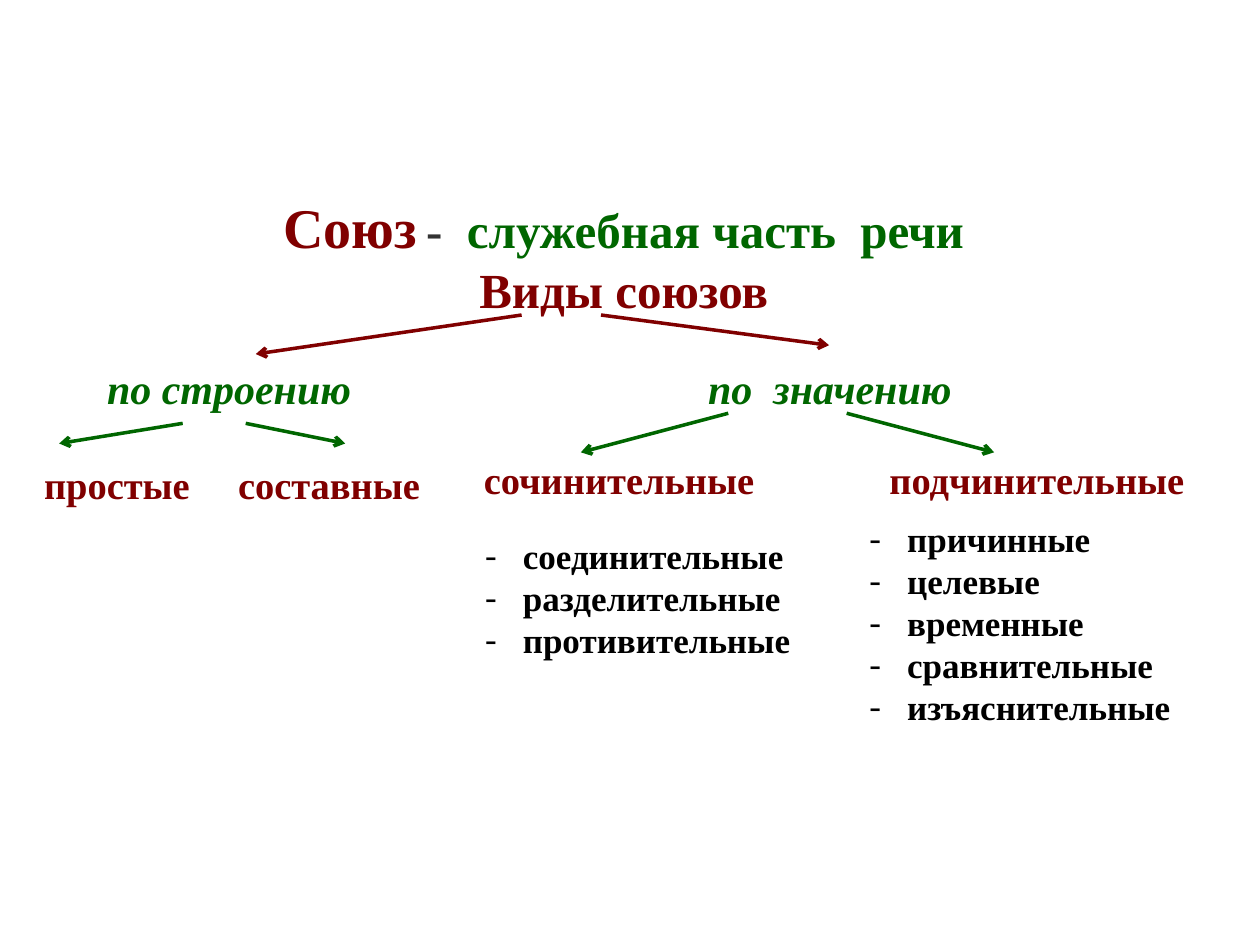
from lxml import etree
from pptx import Presentation
from pptx.dml.color import RGBColor
from pptx.enum.shapes import MSO_CONNECTOR
from pptx.enum.text import PP_ALIGN
from pptx.oxml.ns import qn
from pptx.util import Inches, Pt

STRAIGHT = MSO_CONNECTOR.STRAIGHT
CENTER = PP_ALIGN.CENTER
FONT = "Times New Roman"
MAROON, GREEN, GRAY, BLACK = "800000", "006600", "333333", "000000"


def add_text(left, top, width, height, lines, align=None):
    """Add a text box without margins; each line is a list of (text, size, colour, italic)."""
    box = slide.shapes.add_textbox(Inches(left), Inches(top), Inches(width), Inches(height))
    frame = box.text_frame
    frame.word_wrap = True
    frame.margin_left = frame.margin_right = frame.margin_top = frame.margin_bottom = 0
    for index, line in enumerate(lines):
        paragraph = frame.paragraphs[0] if index == 0 else frame.add_paragraph()
        paragraph.alignment = align
        for text, size, color, italic in line:
            run = paragraph.add_run()
            run.text = text
            run.font.name = FONT
            run.font.size = Pt(size)
            run.font.bold = True
            run.font.italic = italic
            run.font.color.rgb = RGBColor.from_string(color)
    return frame


prs = Presentation()
prs.slide_width, prs.slide_height = Inches(10), Inches(7.5)
slide = prs.slides.add_slide(prs.slide_layouts[6])

# Definition and heading
add_text(1.45, 1.53, 7, 1, [
    [("Союз", 32, MAROON, False), (" ", 20, GRAY, False),
     ("-  ", 28, GRAY, False), ("служебная часть  речи", 28, GREEN, False)],
    [("Виды союзов", 28, MAROON, False)],
], CENTER)

# Branches of the classification
labels = [
    ("по строению", 0.85, 2.88, 24, GREEN, True),
    ("по  значению", 5.62, 2.88, 24, GREEN, True),
    ("простые", 0.35, 3.66, 22, MAROON, False),
    ("составные", 1.89, 3.66, 22, MAROON, False),
    ("сочинительные", 3.84, 3.62, 22, MAROON, False),
    ("подчинительные", 7.06, 3.62, 22, MAROON, False),
]
for text, left, top, size, color, italic in labels:
    width = 1.5 if text == "простые" else 2.6
    add_text(left, top, width, 0.4, [[(text, size, color, italic)]])

# Arrows from each heading to its kinds
arrows = [
    (4.14, 2.5, 2.03, 2.81, MAROON),
    (4.77, 2.5, 6.58, 2.74, MAROON),
    (5.78, 3.28, 4.61, 3.59, GREEN),
    (6.72, 3.28, 7.89, 3.59, GREEN),
    (1.45, 3.36, 0.47, 3.52, GREEN),
    (1.95, 3.36, 2.74, 3.52, GREEN),
]
for x1, y1, x2, y2, color in arrows:
    arrow = slide.shapes.add_connector(STRAIGHT, Inches(x1), Inches(y1), Inches(x2), Inches(y2))
    arrow.line.color.rgb = RGBColor.from_string(color)
    arrow.line.width = Pt(2)
    etree.SubElement(arrow.line._get_or_add_ln(), qn("a:tailEnd"), type="arrow")
    etree.SubElement(arrow._element.spPr, qn("a:effectLst"))

# Subkinds by meaning
subkinds = [
    (3.85, 4.24, ["соединительные", "разделительные", "противительные"]),
    (6.9, 4.11, ["причинные", "целевые", "временные", "сравнительные", "изъяснительные"]),
]
for left, top, names in subkinds:
    frame = add_text(left, top, 2.8, len(names) / 3, [[(name, 20, BLACK, False)] for name in names])
    for paragraph in frame.paragraphs:
        paragraph.line_spacing = Pt(24)
        properties = paragraph._p.get_or_add_pPr()
        properties.set("marL", str(Inches(0.3)))
        properties.set("indent", str(-Inches(0.3)))
        etree.SubElement(properties, qn("a:buFont"), typeface=FONT)
        etree.SubElement(properties, qn("a:buChar"), char="-")

prs.save("out.pptx")
